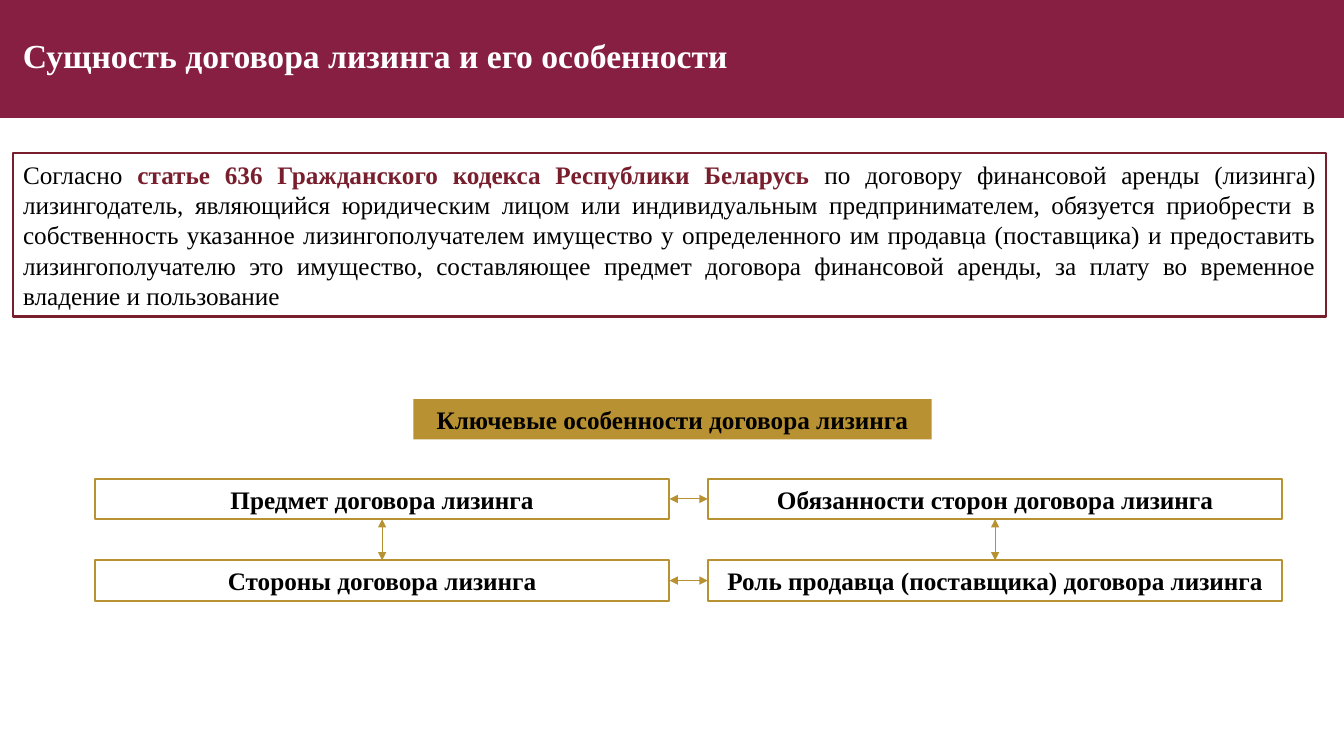
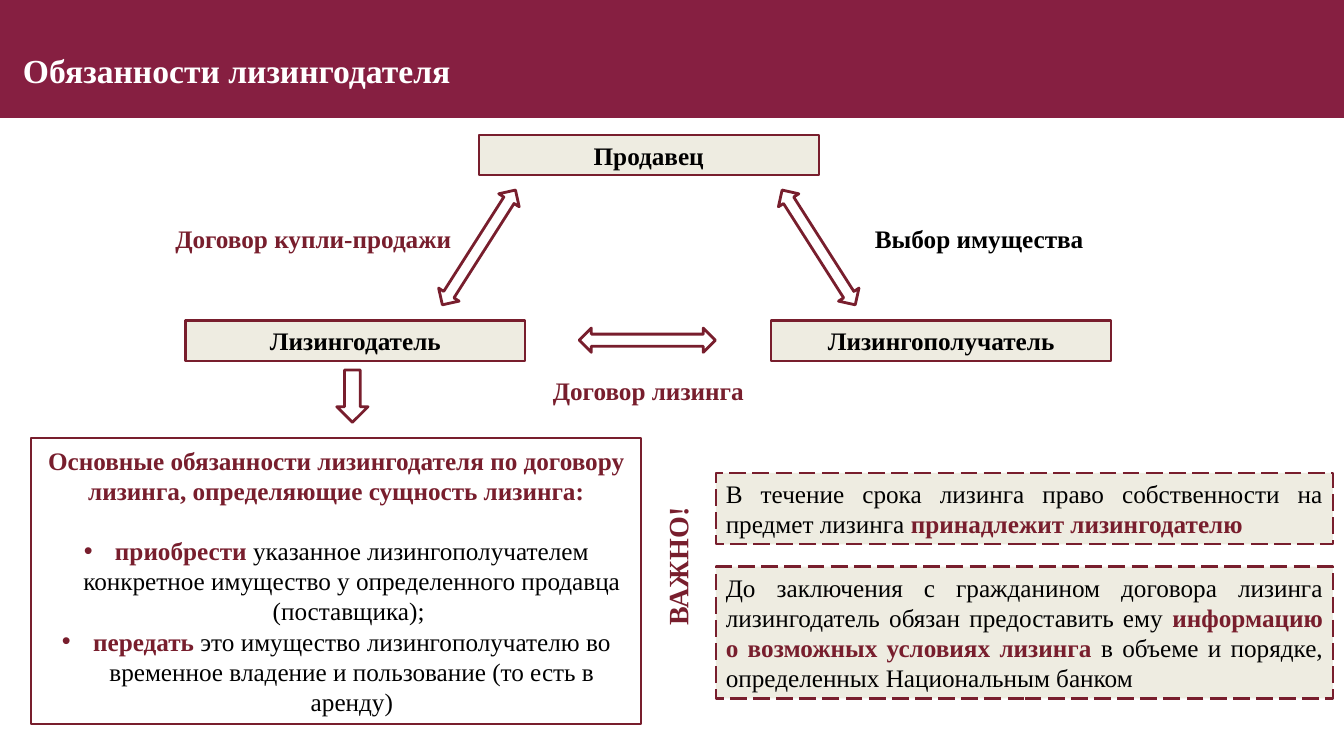
from lxml.etree import SubElement
from pptx import Presentation
from pptx.dml.color import RGBColor
from pptx.enum.dml import MSO_LINE
from pptx.enum.shapes import MSO_CONNECTOR, MSO_SHAPE as SHAPE
from pptx.enum.text import MSO_ANCHOR as ANCHOR, PP_ALIGN as ALIGN
from pptx.oxml.ns import qn
from pptx.util import Inches, Pt

FONT = "Times New Roman"
BAND, WINE, GOLD, CREAM = "861F41", "781E2D", "B89232", "EEECE1"
BLACK, WHITE = "000000", "FFFFFF"
TOP, LEFT, BOTTOM, RIGHT = range(4)


def rgb(color):
    return RGBColor.from_string(color)


def plain(text):
    return text, BLACK, False


def strong(text):
    return text, BLACK, True


def accent(text):
    return text, WINE, True


class Deck:
    """The presentation, its style and the slide being filled."""

    def __init__(self):
        self.prs = Presentation()
        self.prs.slide_width, self.prs.slide_height = Inches(13.33), Inches(7.5)

    def slide(self, title, title_top):
        self.s = self.prs.slides.add_slide(self.prs.slide_layouts[6])
        self.shape(SHAPE.RECTANGLE, 0, 0, 13.33, 1.17, fill=BAND)
        tb = self.text(0.13, title_top, 10.16, 0.58, (title, WHITE, True), size=24)
        tb.text_frame.vertical_anchor = ANCHOR.MIDDLE

    def shape(self, kind, x, y, w, h, fill=None, line=None, width=1.5, rotation=0):
        sp = self.s.shapes.add_shape(kind, Inches(x), Inches(y), Inches(w), Inches(h))
        sp.shadow.inherit = False
        sp.rotation = rotation
        if fill:
            sp.fill.solid()
            sp.fill.fore_color.rgb = rgb(fill)
        else:
            sp.fill.background()
        if line:
            sp.line.color.rgb = rgb(line)
            sp.line.width = Pt(width)
        else:
            sp.line.fill.background()
        return sp

    def box(self, x, y, w, h, *paragraphs, fill=None, line=None, align=ALIGN.CENTER):
        sp = self.shape(SHAPE.RECTANGLE, x, y, w, h, fill, line)
        self.set_text(sp.text_frame, paragraphs, align)
        return sp

    def text(self, x, y, w, h, run, align=ALIGN.LEFT, size=18):
        tb = self.s.shapes.add_textbox(Inches(x), Inches(y), Inches(w), Inches(h))
        self.set_text(tb.text_frame, [[run]], align, size)
        return tb

    def set_text(self, tf, paragraphs, align, size=18):
        """Fill a text frame with paragraphs, each a list of (text, color, bold)."""
        tf.word_wrap = True
        for i, runs in enumerate(paragraphs):
            p = tf.add_paragraph() if i else tf.paragraphs[0]
            p.alignment = align
            for text, color, bold in runs:
                r = p.add_run()
                r.text = text
                r.font.name, r.font.size, r.font.bold = FONT, Pt(size), bold
                r.font.color.rgb = rgb(color)

    def bullet(self, p):
        pPr = p._p.get_or_add_pPr()
        pPr.set("marL", str(Inches(0.31)))
        pPr.set("indent", str(-Inches(0.31)))
        SubElement(pPr, qn("a:buFont"), typeface="Arial")
        SubElement(pPr, qn("a:buChar"), char="•")

    def link(self, start, start_side, end, end_side):
        """Join two boxes with a two-headed arrow."""
        c = self.s.shapes.add_connector(MSO_CONNECTOR.STRAIGHT, 0, 0, 0, 0)
        c.begin_connect(start, start_side)
        c.end_connect(end, end_side)
        c.line.color.rgb = rgb(GOLD)
        c.line.width = Pt(0.75)
        ln = c.line._get_or_add_ln()
        for tag in ("a:headEnd", "a:tailEnd"):
            SubElement(ln, qn(tag), type="triangle")
        SubElement(c._element.spPr, qn("a:effectLst"))


def features_slide(deck):
    deck.slide("Сущность договора лизинга и его особенности", 0.26)
    deck.box(0.13, 1.52, 13.02, 1.62, [
        plain("Согласно "),
        accent("статье 636 Гражданского кодекса Республики Беларусь "),
        plain("по договору финансовой аренды (лизинга) лизингодатель, являющийся "
              "юридическим лицом или индивидуальным предпринимателем, обязуется "
              "приобрести в собственность указанное лизингополучателем имущество у "
              "определенного им продавца (поставщика) и предоставить "
              "лизингополучателю это имущество, составляющее предмет договора "
              "финансовой аренды, за плату во временное владение и пользование"),
    ], line=WINE, align=ALIGN.JUSTIFY)
    deck.box(4.1, 3.96, 5.14, 0.4,
             [strong("Ключевые особенности договора лизинга")], fill=GOLD)

    features = [
        ["Предмет договора лизинга", "Обязанности сторон договора лизинга"],
        ["Стороны договора лизинга", "Роль продавца (поставщика) договора лизинга"],
    ]
    grid = [[deck.box(0.94 + 6.08 * col, 4.75 + 0.81 * row, 5.7, 0.4,
                      [strong(name)], line=GOLD)
             for col, name in enumerate(names)]
            for row, names in enumerate(features)]
    for left, right in grid:
        deck.link(left, RIGHT, right, LEFT)
    for upper, lower in zip(*grid):
        deck.link(upper, BOTTOM, lower, TOP)


def duties_slide(deck):
    deck.slide("Обязанности лизингодателя", 0.4)
    for name, x, y in [("Лизингодатель", 1.84, 3.18),
                       ("Лизингополучатель", 7.65, 3.18),
                       ("Продавец", 4.75, 1.34)]:
        deck.box(x, y, 3.37, 0.4, [strong(name)], fill=CREAM, line=WINE)
    for x, y, rotation in [(4.63, 1.78, 32.5), (8, 1.78, 327.5), (6.3, 2.7, 90)]:
        deck.shape(SHAPE.UP_DOWN_ARROW, x, y, 0.24, 1.35,
                   line=WINE, width=2, rotation=rotation)
    deck.shape(SHAPE.DOWN_ARROW, 3.34, 3.67, 0.31, 0.52, line=WINE, width=2)

    deck.text(1.64, 2.17, 3.1, 0.4, accent("Договор купли-продажи"))
    deck.text(8.58, 2.17, 3.1, 0.4, strong("Выбор имущества"))
    deck.text(4.88, 3.67, 3.1, 0.4, accent("Договор лизинга"), ALIGN.CENTER)

    duties = deck.box(
        0.31, 4.35, 6.05, 2.83,
        [accent("Основные обязанности лизингодателя по договору лизинга, "
                "определяющие сущность лизинга:")],
        [accent("приобрести"),
         plain(" указанное лизингополучателем конкретное имущество у "
               "определенного продавца (поставщика); ")],
        [accent("передать "),
         plain("это имущество лизингополучателю во временное владение и "
               "пользование (то есть в аренду)")],
        line=WINE)
    heading, *items = duties.text_frame.paragraphs
    heading.space_after = Pt(21)
    for p in items:
        deck.bullet(p)

    important = deck.text(6.01, 5.4, 1.42, 0.44, accent("ВАЖНО!"), ALIGN.CENTER, 20)
    important.rotation = 270
    notices = [
        (4.69, 0.71, [
            plain("В течение срока лизинга право собственности на предмет лизинга "),
            accent("принадлежит лизингодателю")]),
        (5.62, 1.31, [
            plain("До заключения с гражданином договора лизинга лизингодатель "
                  "обязан предоставить ему "),
            accent("информацию о возможных условиях лизинга"),
            plain(" в объеме и порядке, определенных Национальным банком")]),
    ]
    for y, h, runs in notices:
        sp = deck.box(7.1, y, 6.12, h, runs, fill=CREAM, line=WINE,
                      align=ALIGN.JUSTIFY)
        sp.line.dash_style = MSO_LINE.LONG_DASH


def main():
    deck = Deck()
    features_slide(deck)
    duties_slide(deck)
    deck.prs.save("out.pptx")


if __name__ == "__main__":
    main()
